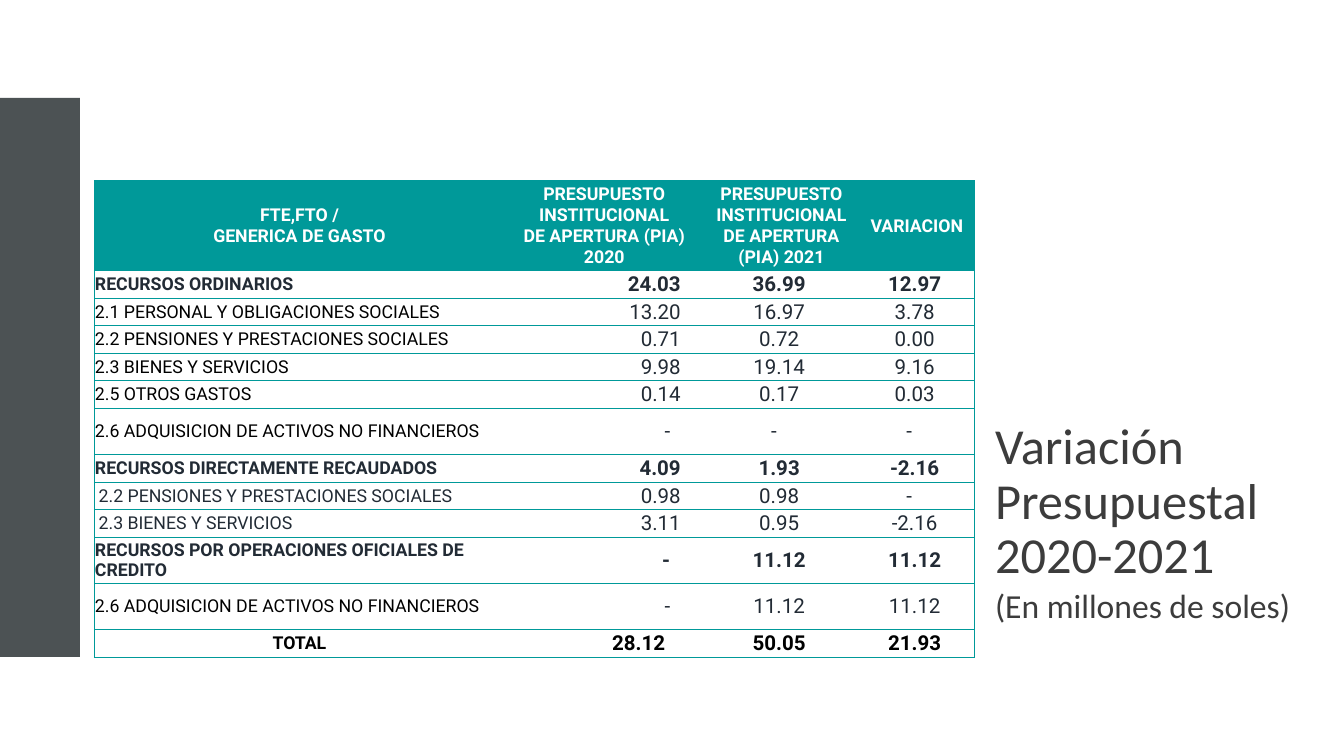
from lxml import etree
from pptx import Presentation
from pptx import util as u
from pptx.dml.color import RGBColor
from pptx.enum import shapes, text
from pptx.oxml.ns import qn

# Content
TITLE = [("Variación Presupuestal 2020-2021", 54), ("(En millones de soles)", 36)]
HEADER = ["FTE,FTO /\nGENERICA DE GASTO",
          "PRESUPUESTO INSTITUCIONAL\nDE APERTURA (PIA) 2020",
          "PRESUPUESTO INSTITUCIONAL DE APERTURA (PIA) 2021",
          "VARIACION"]
# kind of row, label, PIA 2020, PIA 2021, variation
ROWS = [
    ("source", "RECURSOS ORDINARIOS", "24.03", "36.99", "12.97"),
    ("item", "2.1 PERSONAL Y OBLIGACIONES SOCIALES", "13.20", "16.97", "3.78"),
    ("item", "2.2 PENSIONES Y PRESTACIONES SOCIALES", "0.71", "0.72", "0.00"),
    ("item", "2.3 BIENES Y SERVICIOS", "9.98", "19.14", "9.16"),
    ("item", "2.5 OTROS GASTOS", "0.14", "0.17", "0.03"),
    ("item", "2.6 ADQUISICION DE ACTIVOS NO FINANCIEROS", "-", "-", "-"),
    ("source", "RECURSOS DIRECTAMENTE RECAUDADOS", "4.09", "1.93", "-2.16"),
    ("subitem", "2.2 PENSIONES Y PRESTACIONES SOCIALES", "0.98", "0.98", "-"),
    ("subitem", "2.3 BIENES Y SERVICIOS", "3.11", "0.95", "-2.16"),
    ("source", "RECURSOS POR OPERACIONES OFICIALES DE CREDITO", "-", "11.12", "11.12"),
    ("item", "2.6 ADQUISICION DE ACTIVOS NO FINANCIEROS", "-", "11.12", "11.12"),
    ("total", "TOTAL", "28.12", "50.05", "21.93"),
]
COLS = [15.52, 7.52, 5.87, 4.37]
HEAD_H, ROW_H, TALL_H = 3.4, 1.04, 1.75
TALL_ROWS = (6, 10, 11)
TEAL, INK, BLACK, WHITE = "009999", "222B35", "000000", "FFFFFF"
ALIGN = text.PP_ALIGN


def rgb(value):
    return RGBColor.from_string(value)


def box(*lengths):
    return [u.Cm(x) for x in lengths]


def style(p, size, color, font, bold=False, align=ALIGN.LEFT):
    p.alignment = align
    for r in p.runs:
        r.font.size, r.font.name, r.font.bold = u.Pt(size), font, bold
        r.font.color.rgb = rgb(color)


def borders(cell, visible):
    tc_pr = cell._tc.get_or_add_tcPr()
    for side in "LRTB":
        ln = etree.SubElement(tc_pr, qn(f"a:ln{side}"), w=str(u.Pt(0.5)))
        if side in visible:
            fill = etree.SubElement(ln, qn("a:solidFill"))
            etree.SubElement(fill, qn("a:srgbClr"), val=TEAL)
        else:
            etree.SubElement(ln, qn("a:noFill"))


def fill_cell(cell, value, size, color, bold, align, left=0.03, right=0.03):
    cell.margin_left, cell.margin_right = box(left, right)
    cell.margin_top, cell.margin_bottom = box(0.03, 0)
    cell.vertical_anchor = text.MSO_ANCHOR.MIDDLE
    cell.text_frame.text = value
    for p in cell.text_frame.paragraphs:
        style(p, size, color, "Roboto", bold, align)


prs = Presentation()
prs.slide_width, prs.slide_height = box(50.8, 28.58)
s = prs.slides.add_slide(prs.slide_layouts[6])

# Title at the right
tf = s.shapes.add_textbox(*box(37.36, 6.83, 13.26, 16.97)).text_frame
tf.word_wrap = True
tf.vertical_anchor = text.MSO_ANCHOR.BOTTOM
tf.text = "\n".join(line for line, _ in TITLE)
for p, (_, size) in zip(tf.paragraphs, TITLE):
    p.line_spacing, p.space_after = 0.9, u.Pt(6)
    style(p, size, "3C3C3C", "Calibri")

# Side band
sp = s.shapes.add_shape(shapes.MSO_SHAPE.RECTANGLE, *box(0, 3.7, 3.02, 21.13))
sp.shadow.inherit = False
sp.fill.solid()
sp.fill.fore_color.rgb = rgb("4C5254")
sp.line.fill.background()

# Budget table
heights = [HEAD_H] + [TALL_H if i in TALL_ROWS else ROW_H
                      for i in range(1, len(ROWS) + 1)]
tbl = s.shapes.add_table(len(heights), len(COLS),
                         *box(3.56, 6.83, sum(COLS), sum(heights))).table
tbl.first_row = tbl.horz_banding = False
for col, width in zip(tbl.columns, COLS):
    col.width = u.Cm(width)
for row, height in zip(tbl.rows, heights):
    row.height = u.Cm(height)

for i in range(len(heights)):
    for j in range(len(COLS)):
        cell = tbl.cell(i, j)
        borders(cell, "TB" + {0: "L", len(COLS) - 1: "R"}.get(j, ""))
        if i == 0:
            cell.fill.solid()
            cell.fill.fore_color.rgb = rgb(TEAL)
            fill_cell(cell, HEADER[j], 19, WHITE, True, ALIGN.CENTER)
            continue
        cell.fill.background()
        kind, *values = ROWS[i - 1]
        total, dash = kind == "total", values[j] == "-"
        bold = kind in ("source", "total")
        if j == 0:
            fill_cell(cell, values[j], 19,
                      BLACK if kind in ("item", "total") else INK, bold,
                      ALIGN.CENTER if total else ALIGN.LEFT,
                      left=0.17 if kind == "subitem" else 0.03)
        else:
            # The 2020 figures sit to the right, the others in the centre
            if j == 1:
                align, right = ALIGN.RIGHT, 1.46 if total else 1.27 if dash else 0.87
            else:
                align, right = ALIGN.CENTER, 0.6 if dash else 0.2
            fill_cell(cell, values[j], 22, BLACK if total else INK, bold,
                      align, right=right)

prs.save("out.pptx")
